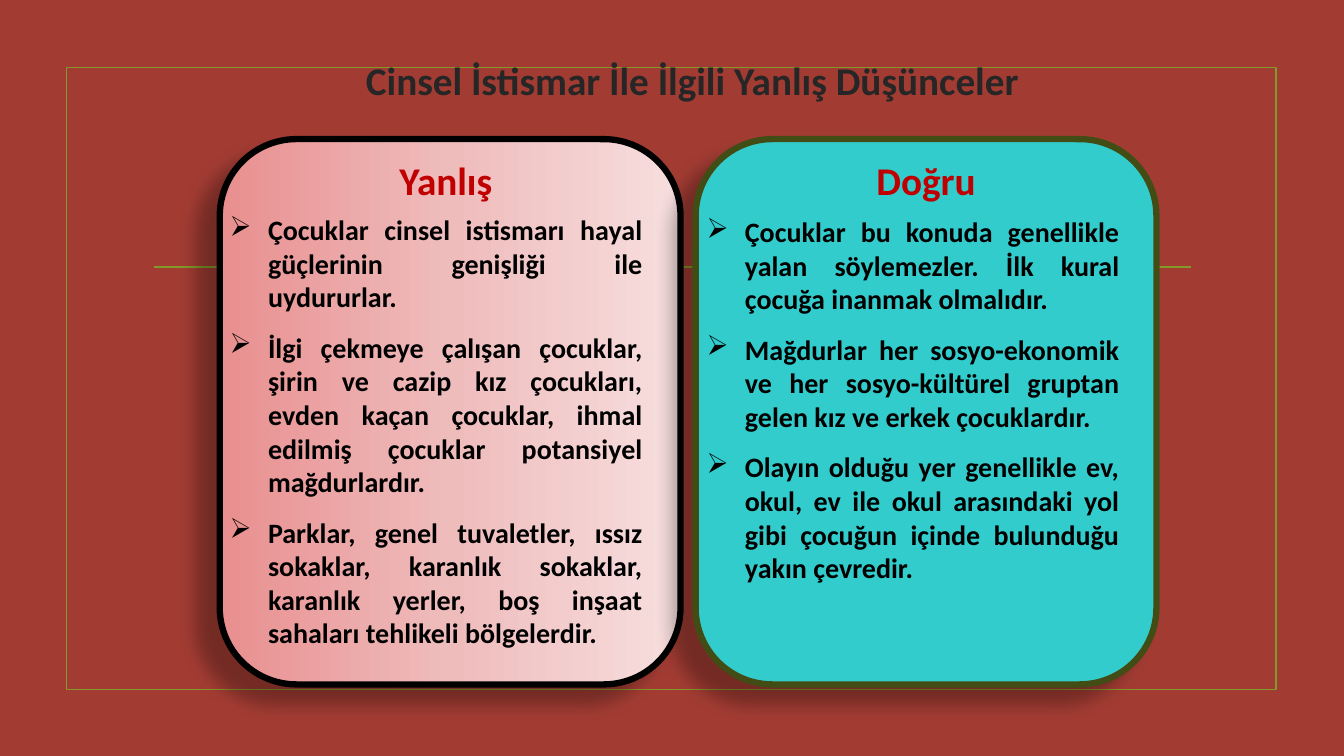
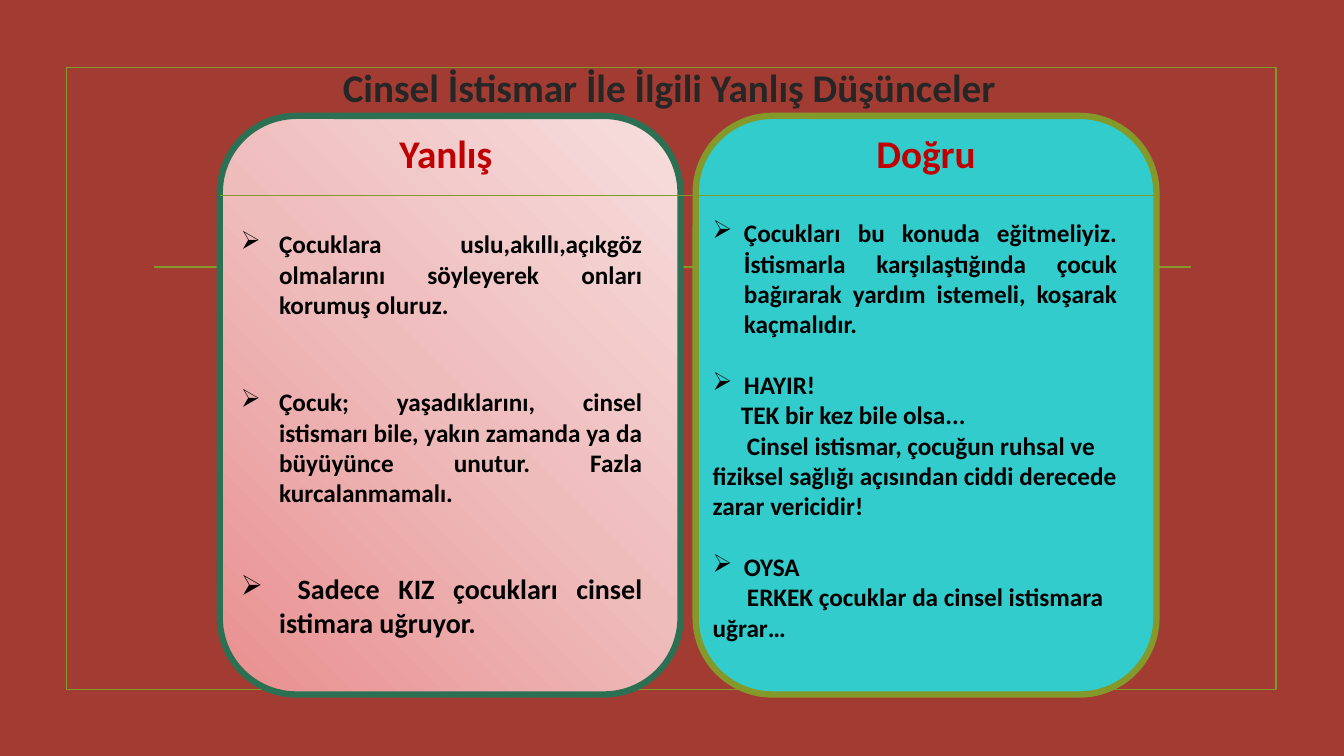
"""Two slides that set wrong beliefs about child abuse beside the right ones."""
import pptx
import pptx.util
import pptx.dml.color
import pptx.enum.shapes
import pptx.enum.text
import pptx.oxml
import pptx.oxml.ns

Inches, Pt = pptx.util.Inches, pptx.util.Pt
RGB = pptx.dml.color.RGBColor.from_string
ALIGN = pptx.enum.text.PP_ALIGN
ANCHOR = pptx.enum.text.MSO_ANCHOR
SHAPE = pptx.enum.shapes.MSO_SHAPE
STRAIGHT = pptx.enum.shapes.MSO_CONNECTOR.STRAIGHT
NS = pptx.oxml.ns.nsdecls("a")

COLORS = {
    "background": "A23C33", "olive": "83992A", "dark olive": "414D15",
    "green": "2C7053", "black": "000000", "title": "262626",
    "heading": "C00000", "turquoise": "33CCCC",
}
PINKS = [(0, "E98F8F"), (50, "EFBCBC"), (100, "F7DEDE")]
FONT = "Calibri"
TITLE = "Cinsel İstismar İle İlgili Yanlış Düşünceler "
HEADINGS = ["Yanlış ", "Doğru"]
CARD_LEFTS = [2.18, 6.9]
CARD_WIDTH = 4.57
J, L = ALIGN.JUSTIFY, ALIGN.LEFT

# Paragraphs: text, size, space before, alignment, left margin, first-line indent, bullet
SLIDES = [
    {
        "title": (2.41, 0.59, 9, 0.41), "card_top": 1.38, "card_height": 5.41,
        "heading_top": 1.5, "angle": 0, "lines": ["black", "dark olive"],
        "shadow": True, "divider": None,
        "bodies": [
            ((2.18, 2.06, 4.29, 4.48), [
                ("Çocuklar cinsel istismarı hayal güçlerinin genişliği ile uydururlar.",
                 20, 0, J, 0.38, -0.38, True),
                ("İlgi çekmeye çalışan çocuklar, şirin ve cazip kız çocukları, evden kaçan "
                 "çocuklar, ihmal edilmiş çocuklar potansiyel mağdurlardır.",
                 20, 12, J, 0.38, -0.38, True),
                ("Parklar, genel tuvaletler, ıssız sokaklar, karanlık sokaklar, karanlık "
                 "yerler, boş inşaat sahaları tehlikeli bölgelerdir.",
                 20, 12, J, 0.38, -0.38, True),
            ]),
            ((6.91, 2.08, 4.29, 4.27), [
                ("Çocuklar bu konuda genellikle yalan söylemezler. İlk kural çocuğa "
                 "inanmak olmalıdır.", 20, 0, J, 0.38, -0.38, True),
                ("Mağdurlar her sosyo-ekonomik ve her sosyo-kültürel gruptan gelen kız "
                 "ve erkek çocuklardır.", 20, 12, J, 0.38, -0.38, True),
                ("Olayın olduğu yer genellikle ev, okul, ev ile okul arasındaki yol gibi "
                 "çocuğun içinde bulunduğu yakın çevredir.",
                 20, 12, J, 0.38, -0.38, True),
            ]),
        ],
    },
    {
        "title": (2.18, 0.45, 9, 0.83), "card_top": 1.15, "card_height": 5.74,
        "heading_top": 1.23, "angle": 315, "lines": ["green", "olive"],
        "shadow": False, "divider": 1.94,
        "bodies": [
            ((2.29, 2.22, 4.18, 4.6), [
                ("Çocuklara uslu,akıllı,açıkgöz olmalarını söyleyerek onları korumuş oluruz.",
                 18, 0, J, 0.38, -0.38, True),
                ("Çocuk; yaşadıklarını, cinsel istismarı bile, yakın zamanda ya da "
                 "büyüyünce unutur. Fazla kurcalanmamalı.", 18, 48, J, 0.38, -0.38, True),
                (" Sadece KIZ çocukları cinsel istimara uğruyor.",
                 20, 46, J, 0.38, -0.38, True),
            ]),
            ((6.97, 2.11, 4.21, 4.6), [
                ("Çocukları bu konuda eğitmeliyiz. İstismarla karşılaştığında çocuk "
                 "bağırarak yardım istemeli, koşarak kaçmalıdır.",
                 18, 0, J, 0.31, -0.31, True),
                ("HAYIR!", 18, 22, L, 0.31, -0.31, True),
                ("TEK bir kez bile olsa...", 18, 0, L, 0, 0.28, False),
                ("Cinsel istismar, çocuğun ruhsal ve fiziksel sağlığı açısından ciddi "
                 "derecede zarar vericidir!", 18, 0, L, 0, 0.34, False),
                ("OYSA", 18, 22, L, 0.31, -0.31, True),
                ("ERKEK çocuklar da cinsel istismara uğrar…", 18, 0, L, 0, 0.34, False),
            ]),
        ],
    },
]


def fill_text(sp, paragraphs, color):
    """Write bold paragraphs into a wrapped text frame."""
    tf = sp.text_frame
    tf.word_wrap = True
    tf.auto_size = pptx.enum.text.MSO_AUTO_SIZE.NONE
    tf.text = "\n".join(item[0] for item in paragraphs)
    for p, (_, size, before, align, margin, indent, bullet) in zip(tf.paragraphs, paragraphs):
        p.alignment = align
        p.space_before = Pt(before)
        pPr = p._p.get_or_add_pPr()
        pPr.set("marL", str(Inches(margin)))
        pPr.set("indent", str(Inches(indent)))
        if bullet:
            pPr.append(pptx.oxml.parse_xml(f'<a:buChar {NS} char="➢"/>'))
        for r in p.runs:
            r.font.name, r.font.size, r.font.bold = FONT, Pt(size), True
            r.font.color.rgb = RGB(COLORS[color])


def add_rule(s, left, right, y, width):
    """Draw a horizontal olive line without a shadow."""
    cx = s.shapes.add_connector(STRAIGHT, Inches(left), Inches(y), Inches(right), Inches(y))
    cx.line.color.rgb = RGB(COLORS["olive"])
    cx.line.width = Pt(width)
    cx.element.spPr.append(pptx.oxml.parse_xml(f"<a:effectLst {NS}/>"))
    return cx


prs = pptx.Presentation()
prs.slide_width, prs.slide_height = Inches(13.33), Inches(7.5)
master = prs.slide_master
master.background.fill.solid()
master.background.fill.fore_color.rgb = RGB(COLORS["background"])

for number, data in enumerate(SLIDES):
    s = prs.slides.add_slide(prs.slide_layouts[5])

    if number == 0:
        frame = s.shapes.add_shape(SHAPE.RECTANGLE, Inches(0.66), Inches(0.67),
                                   Inches(12), Inches(6.17))
        frame.fill.background()
        frame.line.color.rgb = RGB(COLORS["olive"])
        frame.line.width = Pt(1.25)
        frame.shadow.inherit = False
        rule = add_rule(s, 1.53, 11.81, 2.65, 1.25)
        for i, sp in enumerate([frame, rule]):
            sp.element.xpath(".//p:cNvPr")[0].set("id", str(101 + i))
            master.shapes.element.insert(2 + i, sp.element)

    title = s.shapes.title
    title.left, title.top, title.width, title.height = map(Inches, data["title"])
    fill_text(title, [(TITLE, 28, 0, ALIGN.CENTER, 0, 0, False)], "title")
    title.text_frame.vertical_anchor = ANCHOR.MIDDLE

    for i, (left, line) in enumerate(zip(CARD_LEFTS, data["lines"])):
        card = s.shapes.add_shape(SHAPE.ROUNDED_RECTANGLE, Inches(left), Inches(data["card_top"]),
                                  Inches(CARD_WIDTH), Inches(data["card_height"]))
        if i == 0:
            stops = "".join(f'<a:gs pos="{pos * 1000}"><a:srgbClr val="{color}"/></a:gs>'
                            for pos, color in PINKS)
            card.element.spPr.insert(2, pptx.oxml.parse_xml(
                f'<a:gradFill {NS} rotWithShape="1"><a:gsLst>{stops}</a:gsLst>'
                f'<a:lin ang="{data["angle"] * 60000}" scaled="0"/></a:gradFill>'))
        else:
            card.fill.solid()
            card.fill.fore_color.rgb = RGB(COLORS["turquoise"])
        card.line.color.rgb = RGB(COLORS[line])
        card.line.width = Pt(4.5)
        card.shadow.inherit = False
        if data["shadow"]:
            card.element.spPr.xpath("a:effectLst")[0].append(pptx.oxml.parse_xml(
                f'<a:outerShdw {NS} blurRad="{Pt(11.8)}" dist="{Pt(19.7)}" '
                f'dir="{141 * 60000}" algn="ctr" rotWithShape="0">'
                f'<a:srgbClr val="{COLORS["black"]}"><a:alpha val="28000"/></a:srgbClr>'
                '</a:outerShdw>'))

    if data["divider"]:
        add_rule(s, CARD_LEFTS[0], CARD_LEFTS[1] + CARD_WIDTH, data["divider"], 0.75)

    for left, heading, (at, paragraphs) in zip(CARD_LEFTS, HEADINGS, data["bodies"]):
        tb = s.shapes.add_textbox(Inches(left + 0.51), Inches(data["heading_top"]),
                                  Inches(3.55), Inches(0.57))
        fill_text(tb, [(heading, 28, 0, ALIGN.CENTER, 0, 0, False)], "heading")
        body = s.shapes.add_textbox(*map(Inches, at))
        fill_text(body, paragraphs, "black")

prs.save("out.pptx")
